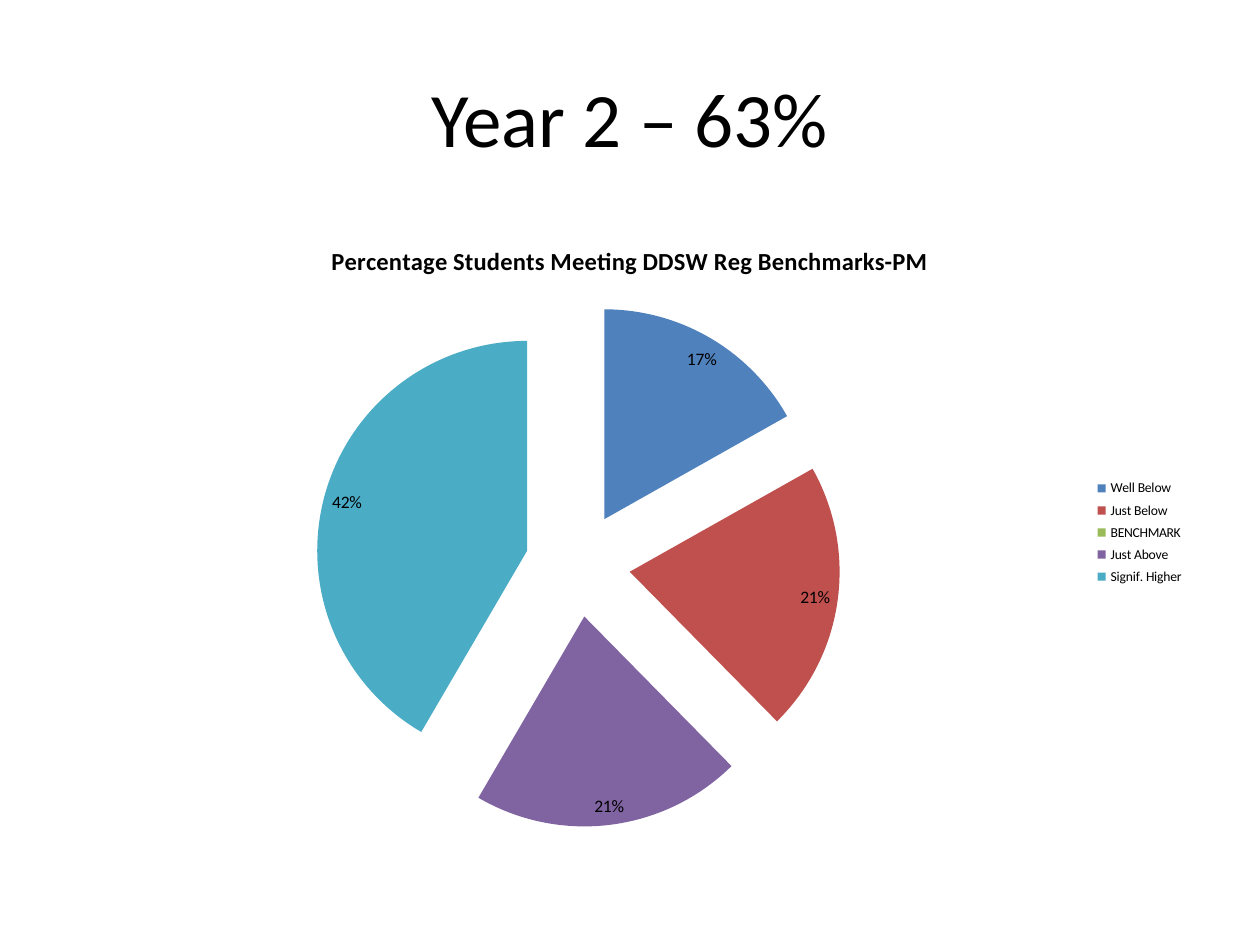
from pptx import Presentation
from pptx.chart.data import CategoryChartData
from pptx.dml.color import RGBColor
from pptx.enum.chart import XL_CHART_TYPE, XL_LABEL_POSITION, XL_LEGEND_POSITION
from pptx.enum.text import MSO_ANCHOR, PP_ALIGN
from pptx.oxml import parse_xml
from pptx.util import Cm, Pt

PIE = XL_CHART_TYPE.PIE
BEST_FIT = XL_LABEL_POSITION.BEST_FIT
RIGHT = XL_LEGEND_POSITION.RIGHT
MIDDLE = MSO_ANCHOR.MIDDLE
CENTER = PP_ALIGN.CENTER
CHART_NS = "http://schemas.openxmlformats.org/drawingml/2006/chart"

SLICES = [
    ("Well Below", 0.17, "4F81BD"),
    ("Just Below", 0.21, "C0504D"),
    ("BENCHMARK", 0, "9BBB59"),
    ("Just Above", 0.21, "8064A2"),
    ("Signif. Higher", 0.42, "4BACC6"),
]


def set_font(font, size, color="000000", bold=False):
    font.name = "Calibri"
    font.size = Pt(size)
    font.bold = bold
    font.color.rgb = RGBColor.from_string(color)


def set_text(tf, text, size, **style):
    p = tf.paragraphs[0]
    p.alignment = CENTER
    r = p.add_run()
    r.text = text
    set_font(r.font, size, **style)


prs = Presentation()
prs.slide_width, prs.slide_height = Cm(25.4), Cm(19.05)
s = prs.slides.add_slide(prs.slide_layouts[5])

# Slide title
title = s.shapes.title
title.left, title.top, title.width, title.height = Cm(1.27), Cm(0.76), Cm(22.86), Cm(3.18)
title.text_frame.vertical_anchor = MIDDLE
set_text(title.text_frame, "Year 2 – 63%", 44)

# Exploded pie chart
data = CategoryChartData(number_format="0%")
data.categories = [name for name, _, _ in SLICES]
data.add_series("Series 1", [value for _, value, _ in SLICES])
chart = s.shapes.add_chart(PIE, Cm(1.27), Cm(4.45), Cm(22.86), Cm(12.57), data).chart
set_font(chart.font, 10)

chart.has_title = True
set_text(chart.chart_title.text_frame,
         "Percentage Students Meeting DDSW Reg Benchmarks-PM", 14, bold=True)
chart.chart_title.include_in_layout = False

chart.has_legend = True
chart.legend.position = RIGHT
chart.legend.include_in_layout = False
set_font(chart.legend.font, 7.8)

plot = chart.plots[0]
plot.vary_by_categories = True
series = plot.series[0]
for i, (_, _, color) in enumerate(SLICES):
    fill = series.points[i].format.fill
    fill.solid()
    fill.fore_color.rgb = RGBColor.from_string(color)

# The explosion element has to stand before the first point
first_point = series._element.dPt_lst[0]
first_point.addprevious(parse_xml(f'<c:explosion xmlns:c="{CHART_NS}" val="25"/>'))

labels = series.data_labels
labels.show_value = True
labels.position = BEST_FIT
labels.number_format = "0%;;"  # leaves the zero slice unlabelled
labels.number_format_is_linked = False
set_font(labels.font, 10)

prs.save("out.pptx")
